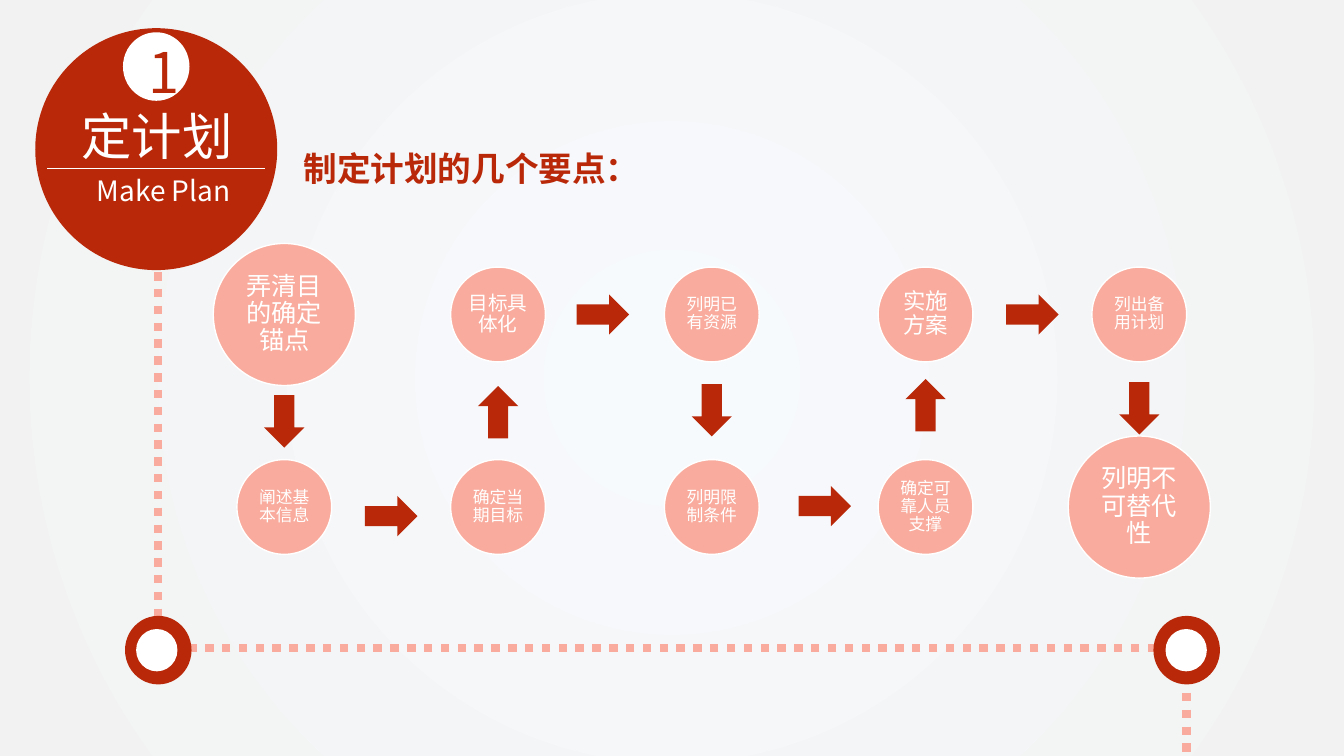
"""Build the "Make Plan" slide with its ten-step planning flow."""
from dataclasses import dataclass

from lxml.etree import SubElement
from pptx import Presentation
from pptx.dml.color import RGBColor
from pptx.enum.dml import MSO_LINE
from pptx.enum.shapes import MSO_CONNECTOR, MSO_SHAPE
from pptx.enum.text import MSO_ANCHOR, MSO_AUTO_SIZE, PP_ALIGN
from pptx.oxml.ns import qn
from pptx.shapes.autoshape import Shape
from pptx.slide import Slide
from pptx.util import Inches, Pt

RED = RGBColor(0xB9, 0x29, 0x09)
PINK = RGBColor(0xF9, 0xAC, 0x9D)
WHITE = RGBColor(0xFF, 0xFF, 0xFF)
CENTER_TINT = RGBColor(0xF7, 0xFA, 0xFD)
EDGE_GRAY = RGBColor(0xF2, 0xF2, 0xF2)
FONT = "Noto Sans CJK SC"

FIRST_COLUMN, COLUMN_STEP = 2.82, 2.12
ROWS = (3.12, 5.03)
SMALL, LARGE = 0.94, 1.41
DOWN, UP, RIGHT = 0, 180, 270


@dataclass(frozen=True)
class Ellipse:
    left: float
    top: float
    width: float
    height: float
    color: RGBColor


@dataclass(frozen=True)
class Line:
    start: tuple[float, float]
    end: tuple[float, float]
    color: RGBColor = PINK
    width: float = 6
    dotted: bool = True


@dataclass(frozen=True)
class Label:
    text: str
    left: float
    top: float
    width: float
    height: float
    size: float
    color: RGBColor = WHITE
    bold: bool = False
    wrap: bool = False
    align: PP_ALIGN = PP_ALIGN.LEFT


@dataclass(frozen=True)
class Step:
    text: str
    column: int
    row: int
    size: float = 12
    diameter: float = SMALL


@dataclass(frozen=True)
class Arrow:
    center_x: float
    center_y: float
    direction: int


def column_center(column: int) -> float:
    return FIRST_COLUMN + column * COLUMN_STEP


BADGE = (Ellipse(0.35, 0.28, 2.4, 2.4, RED), Ellipse(1.22, 0.32, 0.66, 0.68, WHITE))
LABELS = (
    Label("1", 1.37, 0.32, 0.53, 0.77, 40, RED),
    Label("Make Plan", 0.86, 1.67, 1.58, 0.43, 20),
    Label("定计划", 0.4, 0.99, 2.31, 0.7, 36, wrap=True, align=PP_ALIGN.CENTER),
)
HEADING = Label("制定计划的几个要点：", 2.91, 1.42, 3.56, 0.5, 24, RED, bold=True, wrap=True)
LINES = (
    Line((0.47, 1.67), (2.63, 1.67), WHITE, 0.75, dotted=False),
    Line((1.57, 2.7), (1.57, 6.32)),
    Line((11.8, 6.43), (1.57, 6.43)),
    Line((11.77, 6.54), (11.77, 7.5)),
)
RAIL_STOPS = (
    Ellipse(11.44, 6.11, 0.66, 0.68, RED),
    Ellipse(1.24, 6.11, 0.66, 0.68, RED),
    Ellipse(11.56, 6.24, 0.41, 0.42, WHITE),
    Ellipse(1.35, 6.24, 0.41, 0.42, WHITE),
)
STEPS = (
    Step("弄清目的确定锚点", 0, 0, 18, LARGE),
    Step("阐述基本信息", 0, 1),
    Step("确定当期目标", 1, 1),
    Step("目标具体化", 1, 0, 14),
    Step("列明已有资源", 2, 0),
    Step("列明限制条件", 2, 1),
    Step("确定可靠人员支撑", 3, 1),
    Step("实施方案", 3, 0, 16),
    Step("列出备用计划", 4, 0),
    Step("列明不可替代性", 4, 1, 18, LARGE),
)
ARROWS = (
    Arrow(column_center(0), 4.18, DOWN),
    Arrow(3.88, 5.12, RIGHT),
    Arrow(column_center(1), 4.09, UP),
    Arrow(5.98, 3.12, RIGHT),
    Arrow(column_center(2), 4.07, DOWN),
    Arrow(8.18, 5.02, RIGHT),
    Arrow(column_center(3), 4.02, UP),
    Arrow(10.24, 3.12, RIGHT),
    Arrow(column_center(4), 4.05, DOWN),
)


def paint_background(slide: Slide) -> None:
    fill = slide.background.fill
    fill.gradient()
    for stop, color, position in zip(fill.gradient_stops, (CENTER_TINT, EDGE_GRAY), (0, 1)):
        stop.color.rgb = color
        stop.position = position
    gradient = slide.element.find(".//" + qn("a:gradFill"))
    linear = gradient.find(qn("a:lin"))
    if linear is not None:
        gradient.remove(linear)
    circle = SubElement(gradient, qn("a:path"), {"path": "circle"})
    SubElement(circle, qn("a:fillToRect"), {side: "50000" for side in "ltrb"})


def write_text(shape: Shape, text: str, size: float, color: RGBColor,
               align: PP_ALIGN, bold: bool = False) -> None:
    paragraph = shape.text_frame.paragraphs[0]
    paragraph.alignment = align
    run = paragraph.add_run()
    run.text = text
    run.font.name = FONT
    run.font.size = Pt(size)
    run.font.bold = bold
    run.font.color.rgb = color
    SubElement(run.font._element, qn("a:ea"), {"typeface": FONT})


def add_solid(slide: Slide, preset: MSO_SHAPE, left: float, top: float,
              width: float, height: float, color: RGBColor) -> Shape:
    shape = slide.shapes.add_shape(preset, Inches(left), Inches(top), Inches(width), Inches(height))
    shape.shadow.inherit = False
    shape.fill.solid()
    shape.fill.fore_color.rgb = color
    shape.line.fill.background()
    return shape


def draw_ellipse(slide: Slide, ellipse: Ellipse) -> None:
    add_solid(slide, MSO_SHAPE.OVAL, ellipse.left, ellipse.top,
              ellipse.width, ellipse.height, ellipse.color)


def draw_line(slide: Slide, line: Line) -> None:
    connector = slide.shapes.add_connector(
        MSO_CONNECTOR.STRAIGHT, *(Inches(value) for value in line.start + line.end))
    connector.line.color.rgb = line.color
    connector.line.width = Pt(line.width)
    if line.dotted:
        connector.line.dash_style = MSO_LINE.ROUND_DOT
    SubElement(connector.element.spPr, qn("a:effectLst"))


def fill_label(shape: Shape, label: Label) -> None:
    shape.left, shape.top = Inches(label.left), Inches(label.top)
    shape.width, shape.height = Inches(label.width), Inches(label.height)
    frame = shape.text_frame
    frame.word_wrap = label.wrap
    frame.auto_size = MSO_AUTO_SIZE.SHAPE_TO_FIT_TEXT
    frame.vertical_anchor = MSO_ANCHOR.TOP
    frame.paragraphs[0].line_spacing = 1.0
    write_text(shape, label.text, label.size, label.color, label.align, label.bold)


def draw_step(slide: Slide, step: Step) -> None:
    radius = step.diameter / 2
    circle = add_solid(slide, MSO_SHAPE.OVAL, column_center(step.column) - radius,
                       ROWS[step.row] - radius, step.diameter, step.diameter, PINK)
    circle.line.color.rgb = WHITE
    circle.line.width = Pt(1)
    frame = circle.text_frame
    frame.word_wrap = True
    frame.vertical_anchor = MSO_ANCHOR.MIDDLE
    frame.margin_left = frame.margin_right = Inches(0.02)
    frame.margin_top = frame.margin_bottom = Inches(0.02)
    frame.paragraphs[0].line_spacing = 0.9
    write_text(circle, step.text, step.size, WHITE, PP_ALIGN.CENTER)


def draw_arrow(slide: Slide, arrow: Arrow) -> None:
    shape = add_solid(slide, MSO_SHAPE.DOWN_ARROW, arrow.center_x - 0.2,
                      arrow.center_y - 0.26, 0.4, 0.52, RED)
    shape.rotation = arrow.direction


def main() -> None:
    presentation = Presentation()
    presentation.slide_width, presentation.slide_height = Inches(13.33), Inches(7.5)
    slide = presentation.slides.add_slide(presentation.slide_layouts[5])
    paint_background(slide)
    fill_label(slide.shapes.title, HEADING)
    for ellipse in BADGE:
        draw_ellipse(slide, ellipse)
    for label in LABELS:
        fill_label(slide.shapes.add_textbox(0, 0, 0, 0), label)
    for line in LINES:
        draw_line(slide, line)
    for ellipse in RAIL_STOPS:
        draw_ellipse(slide, ellipse)
    for step in STEPS:
        draw_step(slide, step)
    for arrow in ARROWS:
        draw_arrow(slide, arrow)
    presentation.save("out.pptx")


if __name__ == "__main__":
    main()
